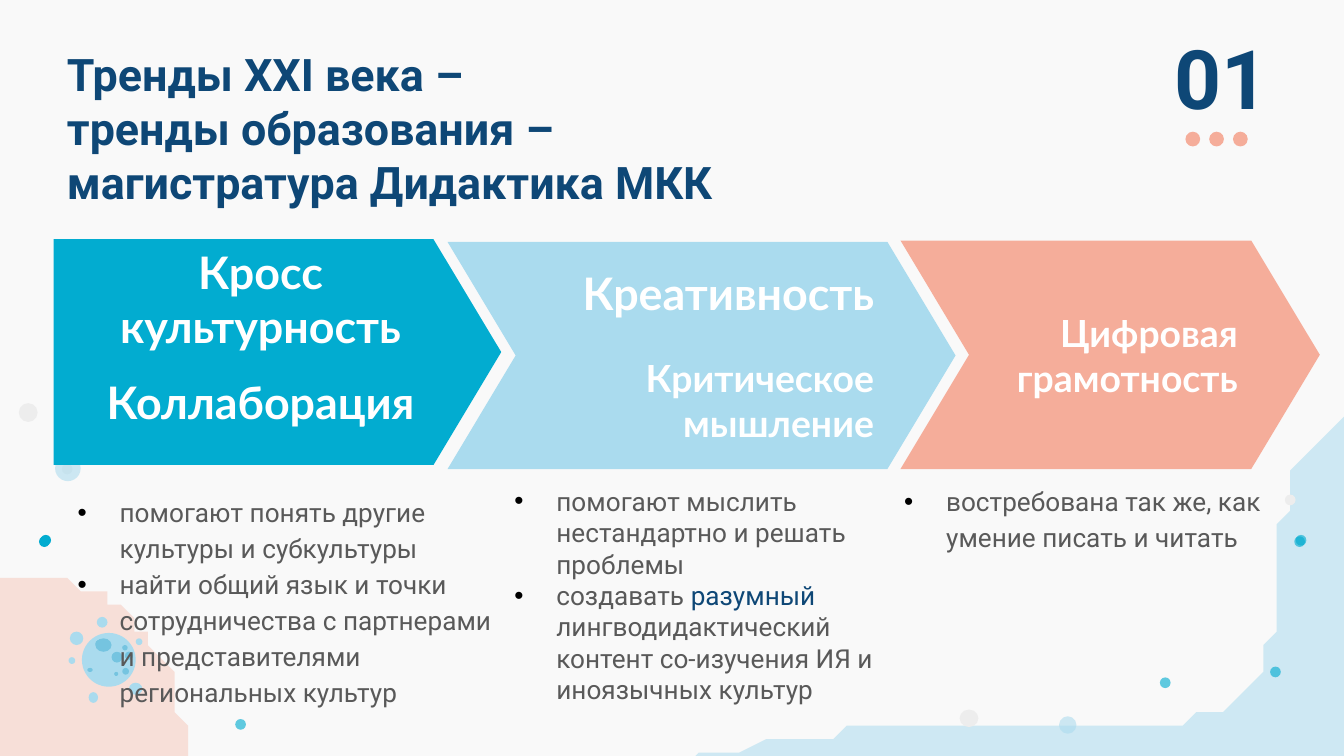
from lxml import etree
from pptx import Presentation
from pptx.dml.color import RGBColor
from pptx.enum.shapes import MSO_SHAPE as SHAPE
from pptx.enum.text import MSO_ANCHOR as ANCHOR, PP_ALIGN as ALIGN
from pptx.oxml.ns import qn
from pptx.util import Inches, Pt

# The slide is 100 cells wide and 56.25 cells high; all lengths are in cells
prs = Presentation()
prs.slide_width, prs.slide_height = Inches(10), Inches(5.625)
CELL = prs.slide_width // 100
NAVY, TEAL, SKY, BLUE = "0E4776", "02ACD0", "AADBEE", "75C4E0"
CORAL, GREY, TEXT, WHITE = "F5AD9A", "EDEDED", "595959", "FFFFFF"

s = prs.slides.add_slide(prs.slide_layouts[6])
s.background.fill.solid()
s.background.fill.fore_color.rgb = RGBColor.from_string("F9F9F9")


def paint(sp, color, alpha=100):
    sp.shadow.inherit = False
    sp.line.fill.background()
    sp.fill.solid()
    sp.fill.fore_color.rgb = RGBColor.from_string(color)
    if alpha < 100:
        clr = sp.fill._xPr.find(".//" + qn("a:srgbClr"))
        etree.SubElement(clr, qn("a:alpha"), val=str(alpha * 1000))


def write(sp, paragraphs, size=14, color=TEXT, font="Roboto", bold=False, align=ALIGN.LEFT,
          anchor=ANCHOR.TOP, spacing=None, bullet=False, bottom=1):
    """Each paragraph is a dict: runs as (text, color) pairs, optional size and space before."""
    tf = sp.text_frame
    tf.word_wrap, tf.vertical_anchor = True, anchor
    tf.margin_left = tf.margin_right = tf.margin_top = CELL
    tf.margin_bottom = int(bottom * CELL)
    for i, item in enumerate(paragraphs):
        p = tf.paragraphs[0] if i == 0 else tf.add_paragraph()
        if bullet:
            pPr = p._p.get_or_add_pPr()
            pPr.set("marL", str(int(3.12 * CELL)))
            pPr.set("indent", str(int(-3.12 * CELL)))
            clr = etree.SubElement(pPr, qn("a:buClr"))
            etree.SubElement(clr, qn("a:srgbClr"), val="000000")
            etree.SubElement(pPr, qn("a:buFont"), typeface="Arial")
            etree.SubElement(pPr, qn("a:buChar"), char="•")
        p.alignment = align
        if spacing:
            p.line_spacing = spacing
        if "before" in item:
            p.space_before = Pt(item["before"])
        for j, line in enumerate(item["runs"]):
            text, run_color = line if isinstance(line, tuple) else (line, color)
            if item.get("breaks") and j:
                p.add_line_break()
            r = p.add_run()
            r.text = text
            r.font.name, r.font.bold = font, bold
            r.font.size = Pt(item.get("size", size))
            r.font.color.rgb = RGBColor.from_string(run_color)


# Corner waves: a start, Bezier curves (two controls and an end), then a corner
waves = [
    ((100.9, 30.3), [((89.9, 36.4), (100.9, 53.5), (86.2, 53.8)),
                     ((71.5, 54.2), (53.2, 52.9), (46.7, 59.7))], (100.9, 59.7), SKY, 54),
    ((13.6, 60.1), [((14.1, 58.2), (14.1, 56), (13.6, 53.8)),
                    ((13, 46.1), (5.4, 41.3), (-1.5, 43.3))], (-1.5, 60.1), CORAL, 34),
]
STEPS = 24
for start, curves, corner, color, alpha in waves:
    points, a = [], start
    for b, c, d in curves:
        for t in (k / STEPS for k in range(1, STEPS + 1)):
            u = 1 - t
            points.append(tuple(u**3 * a[n] + 3 * u * u * t * b[n] + 3 * u * t * t * c[n]
                                + t**3 * d[n] for n in (0, 1)))
        a = d
    builder = s.shapes.build_freeform(*start, scale=CELL)
    builder.add_line_segments(points + [corner], close=True)
    paint(builder.convert_to_shape(), color, alpha)

# Dots: left, top, width, height, colour, opacity
scattered = [
    (4.6, 34.5, .8, .8, GREY, 100), (2.9, 39.9, .8, .8, TEAL, 100),
    (86.3, 50.4, .8, .8, TEAL, 62), (71.4, 52.8, 1.4, 1.3, GREY, 100),
    (96.3, 39.9, .8, .8, TEAL, 62), (4.1, 33.9, 1.9, 1.9, SKY, 57),
    (95.6, 36.8, .8, .8, GREY, 100), (1.4, 30, 1.4, 1.4, GREY, 100),
    (3, 39.8, .8, .8, TEAL, 100), (17.5, 53.5, .8, .8, TEAL, 62),
    (94.5, 49.6, .8, .8, TEAL, 62), (78.8, 53.3, 1.3, 1.3, SKY, 57),
    (96.4, 39.8, .8, .8, TEAL, 62),
]
# Virus: satellites, body, then spots
virus = [
    (7.2, 45.9, .8, .8, SKY, 100), (6.6, 51.5, .7, .8, SKY, 100),
    (5.2, 47, 1, 1, SKY, 100), (9.6, 50.8, 1, .9, SKY, 100),
    (10.1, 47.5, .5, .5, SKY, 100), (5.1, 48.9, .5, .5, SKY, 100),
    (6.1, 47.1, 4, 4, SKY, 100),
    (9.3, 48.5, .6, .6, BLUE, 100), (9.4, 48.5, .4, .3, BLUE, 100),
    (9.1, 48, .4, .4, BLUE, 100), (8.3, 48.5, .8, .8, BLUE, 100),
    (7.1, 47.5, 1.2, 1, BLUE, 100), (7.1, 47.6, .7, .6, BLUE, 100),
    (9.1, 49.7, .5, .5, BLUE, 100), (6.5, 49.7, .4, .3, BLUE, 100),
    (8.5, 50, .3, .3, BLUE, 100),
]
number_dots = [(88.2 + 1.77 * i, 9.8, 1.1, 1.1, CORAL, 100) for i in range(3)]
for x, y, w, h, color, alpha in scattered + virus + number_dots:
    sp = s.shapes.add_shape(SHAPE.OVAL, *(int(v * CELL) for v in (x, y, w, h)))
    paint(sp, color, alpha)

# Title, number and bullet lists
head = dict(color=NAVY, bold=True)
texts = [
    ((4, 2.5, 56.2, 14.3), dict(head, size=24), [{"breaks": True, "runs": [
        "Тренды XXI века –", "тренды образования – магистратура Дидактика МКК"]}]),
    ((86.4, 1.1, 13.2, 9.2), dict(head, size=44, anchor=ANCHOR.MIDDLE), [{"runs": ["01"]}]),
    ((4.8, 35.6, 33.1, 17.5), dict(bullet=True, spacing=1.15), [
        {"runs": ["помогают понять другие культуры и субкультуры"]},
        {"runs": ["найти общий язык и точки сотрудничества с партнерами "
                  "и представителями региональных культур"]}]),
    ((37.3, 35.1, 31.7, 17.9), dict(bullet=True), [
        {"runs": ["помогают мыслить нестандартно и решать проблемы"]},
        {"runs": ["создавать ", ("разумный", NAVY),
                  " лингводидактический контент со-изучения ИЯ и иноязычных культур"]}]),
    ((66.3, 34.8, 32.6, 7.8), dict(bullet=True, spacing=1.15), [
        {"runs": ["востребована так же, как умение писать и читать"]}]),
]
for box, style, paragraphs in texts:
    write(s.shapes.add_textbox(*(int(v * CELL) for v in box)), paragraphs, **style)

# Arrow band
arrows = [
    (SHAPE.PENTAGON, (4, 17.8, 33.3, 16.8), TEAL, dict(align=ALIGN.CENTER, bottom=3.33), [
        {"runs": ["Кросс"]}, {"runs": ["культурность"]},
        {"runs": ["Коллаборация"], "before": 12}]),
    (SHAPE.CHEVRON, (33.3, 18, 37.8, 16.9), SKY, dict(align=ALIGN.RIGHT), [
        {"runs": ["Креативность"]},
        {"runs": ["Критическое мышление"], "size": 20, "before": 19}]),
    (SHAPE.CHEVRON, (67, 17.9, 31.2, 17), CORAL, dict(align=ALIGN.RIGHT), [
        {"runs": ["Цифровая"], "size": 20}, {"runs": ["грамотность"], "size": 20}]),
]
for kind, box, color, style, paragraphs in arrows:
    sp = s.shapes.add_shape(kind, *(int(v * CELL) for v in box))
    sp.adjustments[0] = 0.3
    paint(sp, color)
    write(sp, paragraphs, size=24, color=WHITE, font="Lato", bold=True,
          anchor=ANCHOR.MIDDLE, **style)

prs.save("out.pptx")
